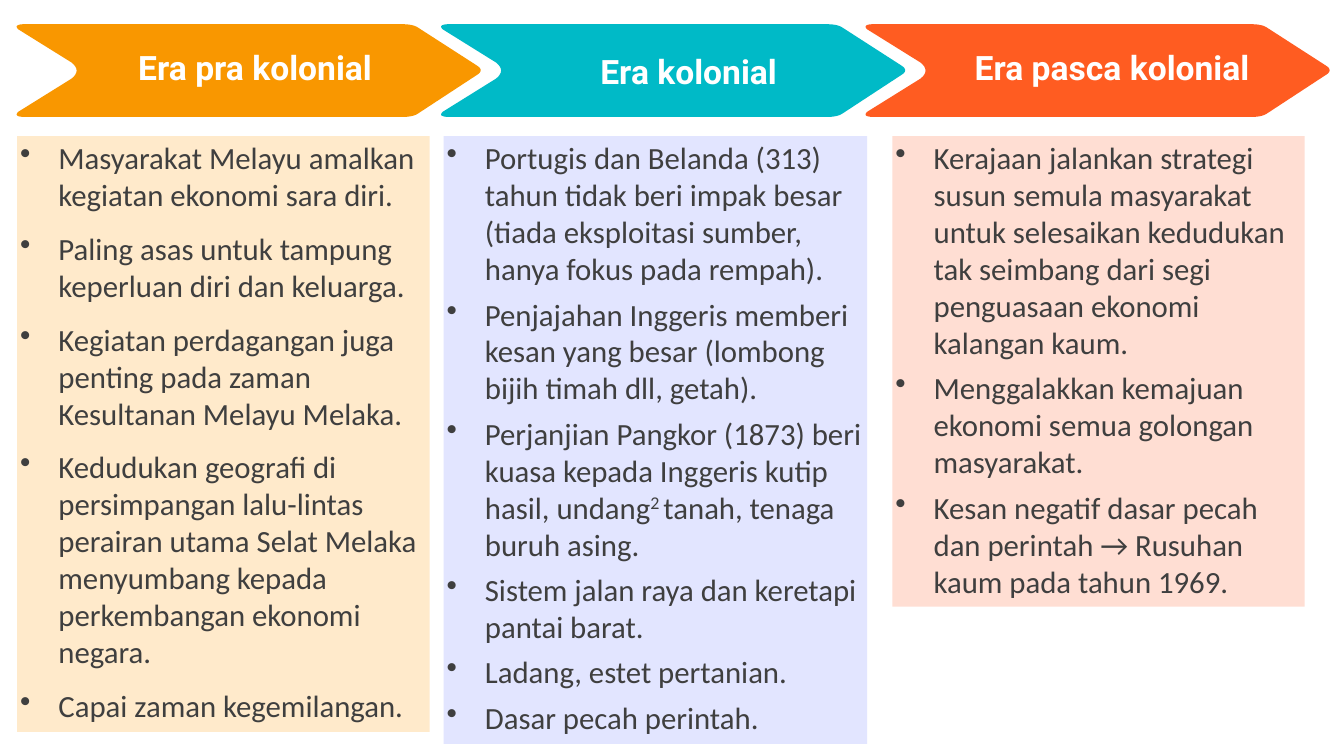
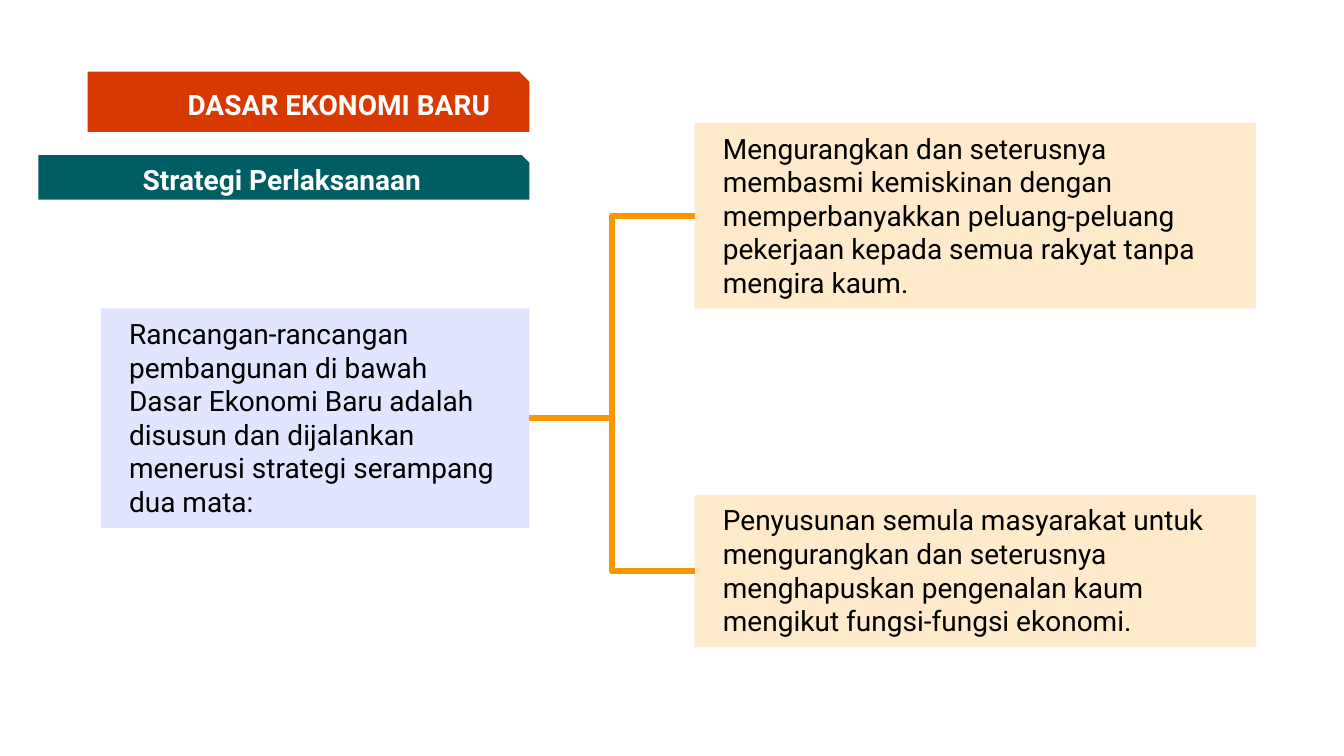
from dataclasses import dataclass

from lxml import etree
from pptx import Presentation
from pptx import util as u
from pptx.dml import color
from pptx.enum import shapes, text
from pptx.oxml import ns

PX = 9144
KIND = shapes.MSO_SHAPE
GROW = text.MSO_AUTO_SIZE.SHAPE_TO_FIT_TEXT
MID = text.MSO_ANCHOR.MIDDLE
TOP = text.MSO_ANCHOR.TOP


@dataclass(frozen=True)
class Theme:
    """Colours, fonts and type sizes of the deck."""
    amber: str = "F99700"
    teal: str = "00BAC7"
    coral: str = "FF5C21"
    cream: str = "FFEACB"
    lilac: str = "E2E5FF"
    blush: str = "FFDED3"
    rust: str = "D83900"
    pine: str = "005D63"
    white: str = "FFFFFF"
    black: str = "000000"
    grey: str = "3F3F3F"
    head: str = "Roboto"
    body: str = "Calibri"
    era: int = 24
    list: int = 22
    base: int = 20
    rule: float = 4.5


T = Theme()
ERA = {"name": T.head, "size": u.Pt(T.era), "bold": True}
LIST = {"name": T.body, "size": u.Pt(T.list), "bold": False}
TITLE = {"name": T.head, "size": u.Pt(T.base), "bold": True}
BODY = {"name": T.head, "size": u.Pt(T.base), "bold": False}

CURVES = (
    ((456, 41), (464, 46), (455, 51)),
    ((397, 89), (392, 92), (382, 92)),
    ((8, 92), (-4, 92), (1, 87)),
    ((54, 54), (64, 46), (54, 38)),
    ((1, 5), (-4, 0), (8, 0)),
    ((382, 0), (392, 0), (397, 3)),
)
STEPS = 8

ERAS = (
    {"name": "Era pra kolonial", "fill": T.amber, "band": (17, 24),
     "label": (63, 18), "tint": T.cream, "box": (17, 135, 409, 591), "gap": 12,
     "items": (
         "Masyarakat Melayu amalkan kegiatan ekonomi sara diri.",
         "Paling asas untuk tampung keperluan diri dan keluarga.",
         "Kegiatan perdagangan juga penting pada zaman Kesultanan Melayu Melaka.",
         "Kedudukan geografi di persimpangan lalu-lintas perairan utama Selat "
         "Melaka menyumbang kepada perkembangan ekonomi negara.",
         "Capai zaman kegemilangan.")},
    {"name": "Era kolonial", "fill": T.teal, "band": (438, 24),
     "label": (72, 22), "tint": T.lilac, "box": (440, 135, 420, 603), "gap": 6,
     "items": (
         "Portugis dan Belanda (313) tahun tidak beri impak besar (tiada "
         "eksploitasi sumber, hanya fokus pada rempah).",
         "Penjajahan Inggeris memberi kesan yang besar (lombong bijih timah "
         "dll, getah).",
         "Perjanjian Pangkor (1873) beri kuasa kepada Inggeris kutip hasil, "
         "undang^2 ^tanah, tenaga buruh asing.",
         "Sistem jalan raya dan keretapi pantai barat.",
         "Ladang, estet pertanian.",
         "Dasar pecah perintah.")},
    {"name": "Era pasca kolonial", "fill": T.coral, "band": (859, 24),
     "label": (71, 18), "tint": T.blush, "box": (885, 135, 409, 467), "gap": 6,
     "items": (
         "Kerajaan jalankan strategi susun semula masyarakat untuk selesaikan "
         "kedudukan tak seimbang dari segi penguasaan ekonomi kalangan kaum.",
         "Menggalakkan kemajuan ekonomi semua golongan masyarakat.",
         "Kesan negatif dasar pecah dan perintah → Rusuhan kaum pada tahun "
         "1969.")},
)

TITLES = (
    ("DASAR EKONOMI BARU", T.rust, (87, 71, 438, 60), 75),
    ("Strategi Perlaksanaan", T.pine, (38, 154, 487, 44), 10),
)
PLAN = ("Rancangan-rancangan pembangunan di bawah Dasar Ekonomi Baru adalah "
        "disusun dan dijalankan menerusi strategi serampang dua mata:")
PRONGS = (
    ("Mengurangkan dan seterusnya membasmi kemiskinan dengan memperbanyakkan "
     "peluang-peluang pekerjaan kepada semua rakyat tanpa mengira kaum.",
     (689, 122, 557, 184)),
    ("Penyusunan semula masyarakat untuk mengurangkan dan seterusnya "
     "menghapuskan pengenalan kaum mengikut fungsi-fungsi ekonomi.",
     (689, 491, 557, 151)),
)


def emu(*vals):
    """Turn px lengths into EMU."""
    return [round(v * PX) for v in vals]


def put(obj, vals):
    """Set each attribute named in a dict."""
    for key, val in vals.items():
        setattr(obj, key, val)


def paint(shape, fill):
    """Give a shape a flat fill with no line or shadow."""
    shape.shadow.inherit = False
    shape.fill.solid()
    shape.fill.fore_color.rgb = color.RGBColor.from_string(fill)
    shape.line.fill.background()


def frame(shape, pads, anchor=TOP, size=GROW):
    """Set the insets, anchor and fit of a text frame."""
    left, top, right, base = emu(*pads)
    put(shape.text_frame, {
        "word_wrap": True, "auto_size": size, "vertical_anchor": anchor,
        "margin_left": left, "margin_top": top,
        "margin_right": right, "margin_bottom": base})


def write(par, words, font, ink, align=text.PP_ALIGN.LEFT):
    """Fill a paragraph, raising the parts held between carets."""
    par.alignment = align
    for num, part in enumerate(words.split("^")):
        run = par.add_run()
        run.text = part
        put(run.font, font)
        run.font.color.rgb = color.RGBColor.from_string(ink)
        if num % 2:
            run.font._element.set("baseline", "30000")


def bullet(par, gap):
    """Add a hanging bullet and the space after it."""
    par.space_after = u.Pt(gap)
    props = par._p.get_or_add_pPr()
    hang = emu(38)[0]
    props.set("marL", str(hang))
    props.set("indent", str(-hang))
    etree.SubElement(props, ns.qn("a:buChar")).set("char", "•")


def bend(start, ctrl, end):
    """List points along one rounded corner."""
    for num in range(STEPS + 1):
        t = num / STEPS
        yield tuple((1 - t) ** 2 * a + 2 * t * (1 - t) * b + t * t * c
                    for a, b, c in zip(start, ctrl, end))


def band(slide, spot, fill):
    """Draw a rounded chevron at a spot."""
    x, y = spot
    dots = [emu(x + a, y + b) for curve in CURVES for a, b in bend(*curve)]
    path = slide.shapes.build_freeform(*dots[0], scale=1.0)
    path.add_line_segments(dots[1:], close=True)
    paint(path.convert_to_shape(), fill)


def label(slide, box, words):
    """Place an era name in its box."""
    shape = slide.shapes.add_textbox(*emu(*box))
    frame(shape, (10, 5, 10, 5))
    write(shape.text_frame.paragraphs[0], words, ERA, T.white,
          text.PP_ALIGN.CENTER)


def block(slide, box, fill, kind=KIND.RECTANGLE):
    """Draw a filled block in its box."""
    shape = slide.shapes.add_shape(kind, *emu(*box))
    paint(shape, fill)
    return shape


def points(slide, box, fill, items, gap):
    """Place a tinted panel of bullets in its box."""
    shape = block(slide, box, fill)
    frame(shape, (3, 3, 3, 3))
    body = shape.text_frame
    for num, item in enumerate(items):
        par = body.add_paragraph() if num else body.paragraphs[0]
        write(par, item, LIST, T.grey)
        bullet(par, gap)


def title(slide, box, words, fill, pad):
    """Place a snipped title tab in its box."""
    shape = block(slide, box, fill, KIND.SNIP_1_RECTANGLE)
    frame(shape, (pad, 5, 10, 5), MID, text.MSO_AUTO_SIZE.NONE)
    write(shape.text_frame.paragraphs[0], words, TITLE, T.white,
          text.PP_ALIGN.CENTER)


def card(slide, box, words, fill):
    """Place a plain text card in its box."""
    shape = block(slide, box, fill)
    frame(shape, (28, 8, 28, 8))
    write(shape.text_frame.paragraphs[0], words, BODY, T.black)
    return shape


def link(slide, start, end):
    """Join the right of one card to the left of another."""
    line = slide.shapes.add_connector(shapes.MSO_CONNECTOR.ELBOW, 0, 0, 0, 0)
    line.begin_connect(start, 3)
    line.end_connect(end, 1)
    line.line.width = u.Pt(T.rule)
    line.line.color.rgb = color.RGBColor.from_string(T.amber)
    etree.SubElement(line._element.spPr, ns.qn("a:effectLst"))


def eras(slide):
    """Build the slide of three eras."""
    for era in ERAS:
        x, y = era["band"]
        dx, dy = era["label"]
        band(slide, (x, y), era["fill"])
        label(slide, (x + dx, y + dy, 346, 50), era["name"])
        points(slide, era["box"], era["tint"], era["items"], era["gap"])


def policy(slide):
    """Build the slide of the two-pronged policy."""
    for words, fill, box, pad in TITLES:
        title(slide, box, words, fill, pad)
    plan = card(slide, (100, 306, 425, 218), PLAN, T.lilac)
    goals = [card(slide, box, words, T.cream) for words, box in PRONGS]
    for goal in goals:
        link(slide, plan, goal)


def main():
    """Build and save the deck."""
    deck = Presentation()
    wide, high = emu(1333, 750)
    put(deck, {"slide_width": wide, "slide_height": high})
    for build in (eras, policy):
        build(deck.slides.add_slide(deck.slide_layouts[6]))
    deck.save("out.pptx")


if __name__ == "__main__":
    main()
